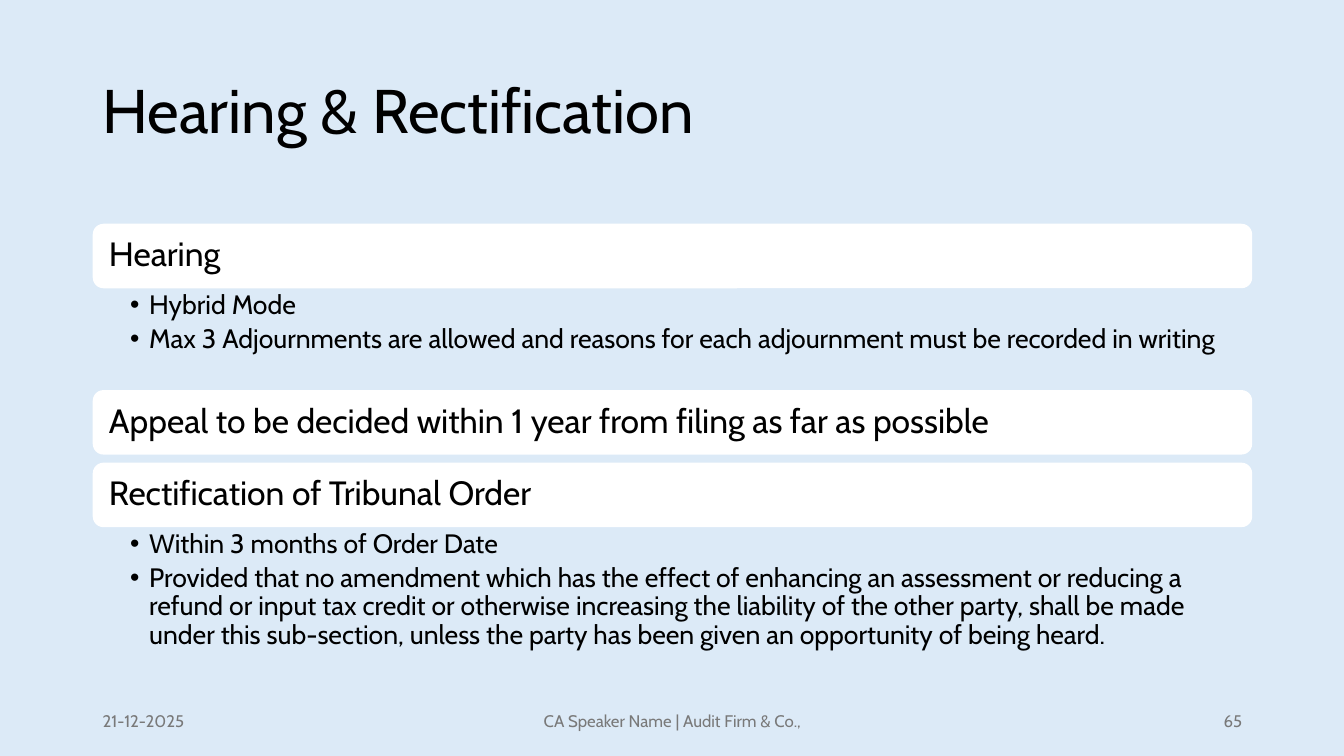
from dataclasses import dataclass

from lxml import etree
from pptx import Presentation
from pptx.dml.color import RGBColor
from pptx.enum.shapes import MSO_SHAPE
from pptx.enum.text import MSO_ANCHOR, PP_ALIGN
from pptx.oxml.ns import qn
from pptx.util import Inches, Pt

ROUND = MSO_SHAPE.ROUNDED_RECTANGLE
MID, TOP = MSO_ANCHOR.MIDDLE, MSO_ANCHOR.TOP
LEFT, CENTER, RIGHT = PP_ALIGN.LEFT, PP_ALIGN.CENTER, PP_ALIGN.RIGHT


@dataclass(frozen=True)
class Theme:
    font: str = "Cabin"
    back: RGBColor = RGBColor(0xDC, 0xEA, 0xF7)
    panel: RGBColor = RGBColor(0xFF, 0xFF, 0xFF)
    ink: RGBColor = RGBColor(0, 0, 0)
    muted: RGBColor = RGBColor(0x79, 0x79, 0x79)
    title: float = 44
    head: float = 24
    body: float = 19
    foot: float = 12


THEME = Theme()
EDGE, WIDTH = 0.92, 11.5
BAR, GAP = 0.64, 0.08
TOPICS = [
    ("Hearing", 1.01, [
        "Hybrid Mode",
        "Max 3 Adjournments are allowed and reasons for each adjournment "
        "must be recorded in writing",
    ]),
    ("Appeal to be decided within 1 year from filing as far as possible", GAP, []),
    ("Rectification of Tribunal Order", 1.3, [
        "Within 3 months of Order Date",
        "Provided that no amendment which has the effect of enhancing an "
        "assessment or reducing a refund or input tax credit or otherwise "
        "increasing the liability of the other party, shall be made under this "
        "sub-section, unless the party has been given an opportunity of being heard.",
    ]),
]
FOOT = [
    (0, 3, "21-12-2025", LEFT),
    (3.5, 4.5, "CA Speaker Name | Audit Firm & Co.,", CENTER),
    (8.5, 3, "65", RIGHT),
]


def write(shape, lines, size, color, align=LEFT, anchor=MID,
          pads=(0.1, 0.05, 0.1, 0.05), space=0.9):
    frame = shape.text_frame
    frame.word_wrap = True
    frame.vertical_anchor = anchor
    (frame.margin_left, frame.margin_top,
     frame.margin_right, frame.margin_bottom) = map(Inches, pads)
    frame.text = "\n".join(lines)
    for para in frame.paragraphs:
        para.alignment = align
        para.line_spacing = space
        for run in para.runs:
            run.font.name = THEME.font
            run.font.size = Pt(size)
            run.font.color.rgb = color
    return frame


def add_box(slide, x, y, w, h):
    return slide.shapes.add_textbox(Inches(x), Inches(y), Inches(w), Inches(h))


def add_title(slide, x, y, w, h):
    write(add_box(slide, x, y, w, h), ["Hearing & Rectification"],
          THEME.title, THEME.ink)


def add_bar(slide, x, y, w, h, head):
    bar = slide.shapes.add_shape(ROUND, Inches(x), Inches(y), Inches(w), Inches(h))
    bar.shadow.inherit = False
    bar.fill.solid()
    bar.fill.fore_color.rgb = THEME.panel
    bar.line.fill.background()
    write(bar, [head], THEME.head, THEME.ink, pads=(0.13, 0.1, 0.13, 0.1))


def add_points(slide, x, y, w, h, points):
    frame = write(add_box(slide, x, y, w, h), points, THEME.body, THEME.ink,
                  anchor=TOP, pads=(0.37, 0.03, 0.19, 0.03))
    for para in frame.paragraphs:
        para.space_after = Pt(THEME.body * 0.2)
        props = para._p.get_or_add_pPr()
        props.set("marL", str(Inches(0.19)))
        props.set("indent", str(-Inches(0.19)))
        etree.SubElement(props, qn("a:buFont")).set("typeface", "Arial")
        etree.SubElement(props, qn("a:buChar")).set("char", "•")


def add_topics(slide, x, y, w):
    for head, drop, points in TOPICS:
        add_bar(slide, x, y, w, BAR, head)
        y += BAR
        if points:
            add_points(slide, x, y, w, drop, points)
        y += drop


def add_footer(slide, x, y, h):
    for shift, w, text, align in FOOT:
        write(add_box(slide, x + shift, y, w, h), [text],
              THEME.foot, THEME.muted, align, space=1.0)


def main():
    deck = Presentation()
    deck.slide_width, deck.slide_height = Inches(13.33), Inches(7.5)
    slide = deck.slides.add_slide(deck.slide_layouts[6])
    slide.background.fill.solid()
    slide.background.fill.fore_color.rgb = THEME.back
    add_title(slide, EDGE, 0.4, WIDTH, 1.45)
    add_topics(slide, EDGE, 2.22, WIDTH)
    add_footer(slide, EDGE, 6.95, 0.4)
    deck.save("out.pptx")


if __name__ == "__main__":
    main()
